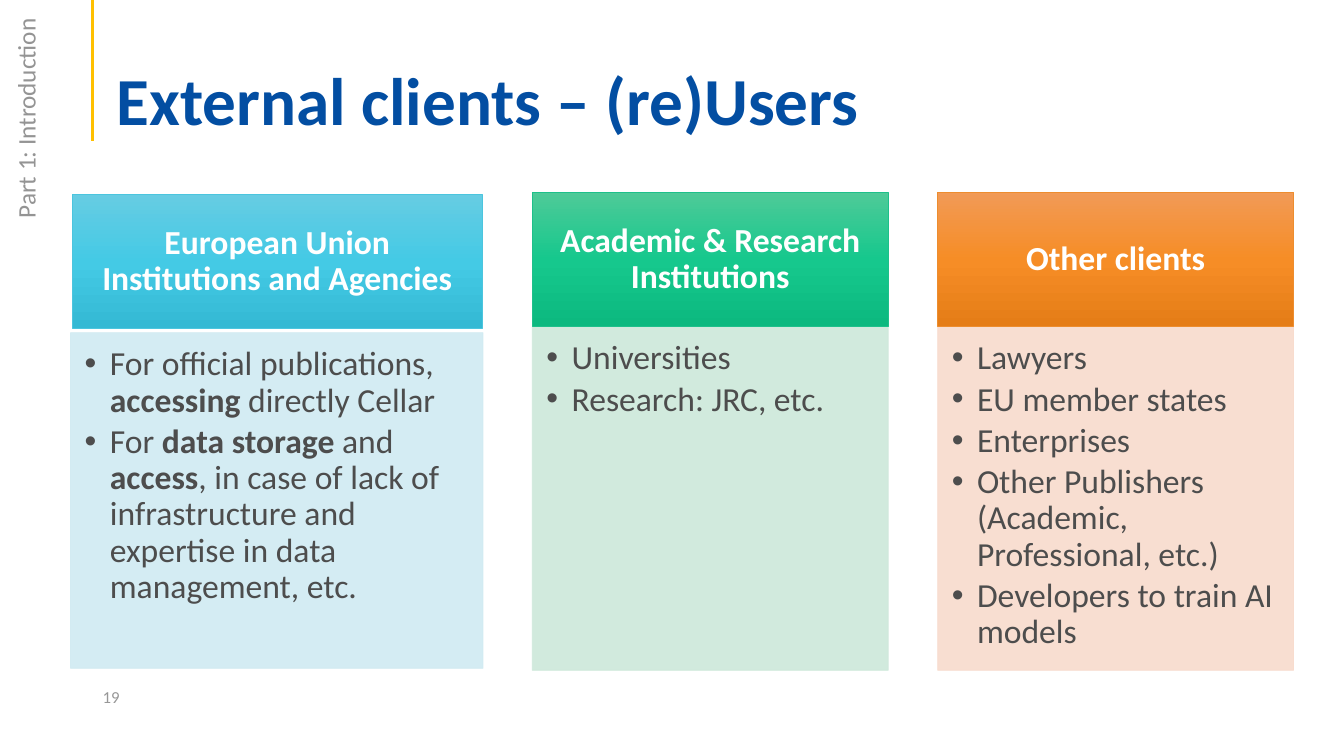
from pptx import Presentation
from pptx.dml.color import RGBColor
from pptx.enum import shapes, text
from pptx.oxml import parse_xml
from pptx.oxml.ns import nsdecls, qn
from pptx.util import Inches, Pt
from lxml import etree

WHITE = RGBColor(0xFF, 0xFF, 0xFF)
BLUE = RGBColor(0x03, 0x4E, 0xA2)
YELLOW = RGBColor(0xFF, 0xC0, 0x00)
DARK_GREY = RGBColor(0x4D, 0x4D, 0x4D)
SECTION_GREY = RGBColor(0x94, 0x94, 0x94)
NUMBER_GREY = RGBColor(0x97, 0x97, 0x97)

CYAN_GRADIENT = [RGBColor(0x66, 0xCC, 0xE3), RGBColor(0x44, 0xCA, 0xE5), RGBColor(0x34, 0xB9, 0xD4)]
CYAN_LINE = RGBColor(0x4B, 0xC5, 0xDE)
CYAN_TINT = RGBColor(0xD0, 0xEA, 0xF2)
GREEN_GRADIENT = [RGBColor(0x4E, 0xCA, 0x98), RGBColor(0x16, 0xC8, 0x8D), RGBColor(0x0C, 0xB9, 0x7F)]
GREEN_LINE = RGBColor(0x1E, 0xC0, 0x8A)
GREEN_TINT = RGBColor(0xCD, 0xE8, 0xDA)
ORANGE_GRADIENT = [RGBColor(0xF1, 0x9A, 0x56), RGBColor(0xF6, 0x8D, 0x26), RGBColor(0xE5, 0x7D, 0x17)]
ORANGE_LINE = RGBColor(0xED, 0x8D, 0x2F)
ORANGE_TINT = RGBColor(0xF8, 0xDB, 0xCD)

# Heading box, list box, colours, heading, list items as (text, bold) runs
COLUMNS = [
    ((0.72, 1.93, 4.06, 1.33), (0.7, 3.3, 4.09, 3.33), CYAN_GRADIENT, CYAN_LINE, CYAN_TINT,
     "European Union Institutions and Agencies",
     [[("For official publications, ", False), ("accessing ", True), ("directly Cellar", False)],
      [("For ", False), ("data storage ", True), ("and ", False), ("access", True),
       (", in case of lack of infrastructure and expertise in data management, etc.", False)]]),
    ((5.28, 1.91, 3.53, 1.33), (5.28, 3.24, 3.53, 3.41), GREEN_GRADIENT, GREEN_LINE, GREEN_TINT,
     "Academic & Research Institutions",
     [[("Universities", False)], [("Research: JRC, etc.", False)]]),
    ((9.3, 1.91, 3.53, 1.33), (9.3, 3.24, 3.53, 3.41), ORANGE_GRADIENT, ORANGE_LINE, ORANGE_TINT,
     "Other clients",
     [[("Lawyers", False)], [("EU member states", False)], [("Enterprises", False)],
      [("Other Publishers (Academic, Professional, etc.)", False)],
      [("Developers to train AI models", False)]]),
]


class ClientSlide:
    """Holds the slide being built and its text style."""

    font = "Calibri"
    body_size = 24
    line_spacing = 0.9

    def __init__(self, prs, layout):
        self.s = prs.slides.add_slide(layout)

    def place(self, sp, box):
        sp.left, sp.top, sp.width, sp.height = (Inches(v) for v in box)

    def frame(self, sp, insets, anchor):
        tf = sp.text_frame
        tf.auto_size = text.MSO_AUTO_SIZE.NONE
        tf.word_wrap = True
        tf.vertical_anchor = anchor
        tf.margin_left, tf.margin_top, tf.margin_right, tf.margin_bottom = (
            Inches(v) for v in insets)
        return tf

    def run(self, p, words, size, color, bold=False):
        r = p.add_run()
        r.text = words
        r.font.name = self.font
        r.font.size = Pt(size)
        r.font.bold = bold
        r.font.color.rgb = color

    def title(self, words, box):
        sp = self.s.shapes.title
        self.place(sp, box)
        tf = self.frame(sp, (0.1, 0.05, 0.1, 0), text.MSO_ANCHOR.BOTTOM)
        p = tf.paragraphs[0]
        p.alignment = text.PP_ALIGN.LEFT
        p.line_spacing = self.line_spacing
        self.run(p, words, 48, BLUE, True)

    def rule(self, x, top, bottom):
        line = self.s.shapes.add_connector(
            shapes.MSO_CONNECTOR.STRAIGHT, Inches(x), Inches(top), Inches(x), Inches(bottom))
        line.line.color.rgb = YELLOW
        line.line.width = Pt(2.25)
        etree.SubElement(line._element.spPr, qn("a:effectLst"))

    def heading(self, words, box, gradient, outline):
        sp = self.s.shapes.add_shape(shapes.MSO_SHAPE.RECTANGLE, *(Inches(v) for v in box))
        sp.shadow.inherit = False
        stops = "".join(
            f'<a:gs pos="{i * 50000}"><a:srgbClr val="{c}"/></a:gs>' for i, c in enumerate(gradient))
        sp._element.spPr.find(qn("a:prstGeom")).addnext(parse_xml(
            f'<a:gradFill {nsdecls("a")} rotWithShape="1"><a:gsLst>{stops}</a:gsLst>'
            '<a:lin ang="5400000" scaled="0"/></a:gradFill>'))
        sp.line.color.rgb = outline
        sp.line.width = Pt(0.5)
        tf = self.frame(sp, (0.19, 0.11, 0.19, 0.11), text.MSO_ANCHOR.MIDDLE)
        p = tf.paragraphs[0]
        p.alignment = text.PP_ALIGN.CENTER
        p.line_spacing = self.line_spacing
        self.run(p, words, self.body_size, WHITE, True)

    def bullets(self, sp, items, box, tint):
        """Fills a body placeholder with a tinted bullet list."""
        self.place(sp, box)
        sp.fill.solid()
        sp.fill.fore_color.rgb = tint
        sp.line.color.rgb = tint
        sp.line.width = Pt(0.5)
        for clr in sp._element.spPr.iter(qn("a:srgbClr")):
            etree.SubElement(clr, qn("a:alpha"), val="90000")
        tf = self.frame(sp, (0.14, 0.14, 0.19, 0.21), text.MSO_ANCHOR.TOP)
        for i, runs in enumerate(items):
            p = tf.add_paragraph() if i else tf.paragraphs[0]
            p.line_spacing = self.line_spacing
            p.space_before = Pt(0)
            p.space_after = Pt(0.15 * self.body_size)
            pPr = p._p.get_or_add_pPr()
            pPr.set("marL", str(Inches(0.25)))
            pPr.set("indent", str(-Inches(0.25)))
            etree.SubElement(pPr, qn("a:buFont"), typeface="Arial")
            etree.SubElement(pPr, qn("a:buChar"), char="•")
            for words, bold in runs:
                self.run(p, words, self.body_size, DARK_GREY, bold)

    def label(self, words, box, size, color, anchor, rotation=0):
        sp = self.s.shapes.add_textbox(*(Inches(v) for v in box))
        sp.rotation = rotation
        tf = self.frame(sp, (0.1, 0.05, 0.1, 0.05), anchor)
        self.run(tf.paragraphs[0], words, size, color)


def main():
    prs = Presentation()
    prs.slide_width, prs.slide_height = Inches(13.33), Inches(7.5)
    slide = ClientSlide(prs, prs.slide_layouts.get_by_name("Comparison"))
    bodies = [ph for ph in slide.s.placeholders if ph.placeholder_format.idx != 0]

    slide.rule(0.92, 0, 1.4)
    slide.title("External clients – (re)Users", (1.06, 0.53, 11.5, 0.86))
    for body, column in zip(bodies, COLUMNS):
        head_box, list_box, gradient, outline, tint, heading, items = column
        slide.heading(heading, head_box, gradient, outline)
        slide.bullets(body, items, list_box, tint)
    for spare in bodies[len(COLUMNS):]:
        spare._element.getparent().remove(spare._element)
    slide.label("Part 1: Introduction", (-0.85, 0.96, 2.21, 0.4), 18, SECTION_GREY,
                text.MSO_ANCHOR.TOP, 270)
    slide.label("19", (0.92, 6.71, 3, 0.4), 12, NUMBER_GREY, text.MSO_ANCHOR.MIDDLE)
    prs.save("out.pptx")


if __name__ == "__main__":
    main()
